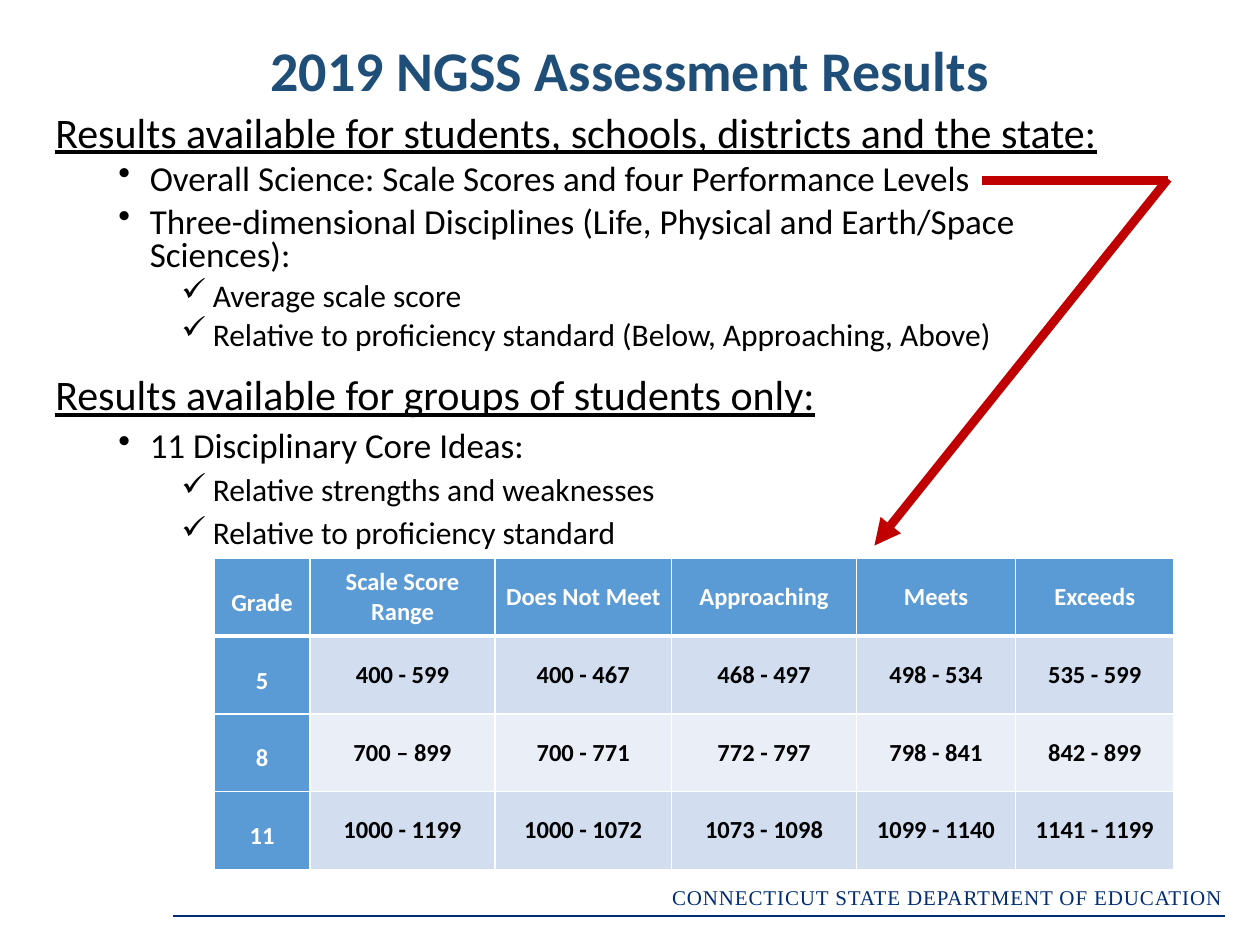
from pptx import Presentation
from pptx.dml.color import RGBColor
from pptx.enum.shapes import MSO_CONNECTOR
from pptx.enum.text import MSO_ANCHOR, PP_ALIGN
from pptx.oxml.ns import qn
from pptx.util import Pt
from lxml import etree

STRAIGHT = MSO_CONNECTOR.STRAIGHT
TOP, MIDDLE = MSO_ANCHOR.TOP, MSO_ANCHOR.MIDDLE
CENTER, RIGHT = PP_ALIGN.CENTER, PP_ALIGN.RIGHT

WHITE = RGBColor(0xFF, 0xFF, 0xFF)
BLACK = RGBColor(0x00, 0x00, 0x00)
NAVY = RGBColor(0x00, 0x2D, 0x73)
TITLE_BLUE = RGBColor(0x1F, 0x4E, 0x79)
HEADER_BLUE = RGBColor(0x5B, 0x9B, 0xD5)
BAND_DARK = RGBColor(0xD2, 0xDE, 0xEF)
BAND_LIGHT = RGBColor(0xEA, 0xEF, 0xF7)
RED = RGBColor(0xC0, 0x00, 0x00)


def set_font(para, size, color, name="Calibri", bold=False):
    para.font.name = name
    para.font.size = Pt(size)
    para.font.bold = bold
    para.font.color.rgb = color


def add_line(start, end, color, width):
    line = page.shapes.add_connector(STRAIGHT, *map(Pt, start + end))
    line.line.color.rgb = color
    line.line.width = Pt(width)
    etree.SubElement(line._element.spPr, qn("a:effectLst"))
    return line


deck = Presentation()
deck.slide_width, deck.slide_height = Pt(720), Pt(540)
page = deck.slides.add_slide(deck.slide_layouts[6])

# Footer
add_line((98.64, 523.44), (699.84, 523.44), NAVY, 0.75)
footer = page.shapes.add_textbox(Pt(372.96), Pt(501.84), Pt(332.64), Pt(21.6))
footer.text_frame.word_wrap = True
para = footer.text_frame.paragraphs[0]
span = para.add_run()
span.text = "CONNECTICUT STATE DEPARTMENT OF EDUCATION"
span._r.get_or_add_rPr().set("spc", "50")
para.alignment = RIGHT
set_font(para, 12, NAVY, "Times New Roman")

# Title
title = page.shapes.add_textbox(Pt(49.68), Pt(18), Pt(620.64), Pt(48.24))
title.text_frame.word_wrap = True
title.text_frame.vertical_anchor = MIDDLE
para = title.text_frame.paragraphs[0]
para.text = "2019 NGSS Assessment Results"
para.alignment = CENTER
para.line_spacing = 0.9
set_font(para, 32, TITLE_BLUE, bold=True)

# Outlines: top, line spacing, (level, text)
OUTLINES = [
    (62.64, 0.8, [
        (0, "Results available for students, schools, districts and the state:"),
        (1, "Overall Science: Scale Scores and four Performance Levels"),
        (1, "Three-dimensional Disciplines (Life, Physical and Earth/Space Sciences):"),
        (2, "Average scale score"),
        (2, "Relative to proficiency standard (Below, Approaching, Above)"),
    ]),
    (210.24, 0.9, [
        (0, "Results available for groups of students only:"),
        (1, "11 Disciplinary Core Ideas:"),
        (2, "Relative strengths and weaknesses"),
        (2, "Relative to proficiency standard"),
    ]),
]
SIZES = [24, 20, 18]
BULLETS = ["", "•", "✓"]
for top, spacing, items in OUTLINES:
    box = page.shapes.add_textbox(Pt(24.48), Pt(top), Pt(620.64), Pt(146.88))
    frame = box.text_frame
    frame.word_wrap = True
    for index, (level, text) in enumerate(items):
        para = frame.add_paragraph() if index else frame.paragraphs[0]
        para.text = text
        para.level = level
        para.line_spacing = spacing
        para.space_before = Pt(5 if index else 0)
        if level:
            props = para._p.get_or_add_pPr()
            props.set("marL", str(Pt(18 + 36 * level)))
            props.set("indent", str(Pt(-18)))
            etree.SubElement(props, qn("a:buChar"), char=BULLETS[level])
        set_font(para, SIZES[level], BLACK)
        para.font.underline = level == 0

# Score table
ROWS = [
    ["Grade", "Scale Score Range", "Does Not Meet", "Approaching", "Meets", "Exceeds"],
    ["5", "400 - 599", "400 - 467", "468 - 497", "498 - 534", "535 - 599"],
    ["8", "700 – 899", "700 - 771", "772 - 797", "798 - 841", "842 - 899"],
    ["11", "1000 - 1199", "1000 - 1072", "1073 - 1098", "1099 - 1140", "1141 - 1199"],
]
WIDTHS = [54.72, 105.84, 100.8, 105.84, 90.72, 90.72]
ROW_HEIGHT = 44.5
table = page.shapes.add_table(len(ROWS), len(WIDTHS), Pt(122.4), Pt(318.96),
                              Pt(sum(WIDTHS)), Pt(ROW_HEIGHT * len(ROWS))).table
for column, width in zip(table.columns, WIDTHS):
    column.width = Pt(width)
for r, texts in enumerate(ROWS):
    table.rows[r].height = Pt(ROW_HEIGHT)
    for c, text in enumerate(texts):
        cell = table.cell(r, c)
        heading = r == 0 or c == 0
        cell.margin_left = cell.margin_right = Pt(5)
        cell.margin_bottom = 0
        # The grade column sits one text line below the top
        cell.margin_top = Pt(0 if c else 17)
        cell.vertical_anchor = MIDDLE if c else TOP
        para = cell.text_frame.paragraphs[0]
        para.text = text
        para.alignment = CENTER
        set_font(para, 14, WHITE if heading else BLACK, bold=True)
        # White borders, thicker under the header row
        props = cell._tc.get_or_add_tcPr()
        for side in "LRTB":
            thick = (r, side) in ((0, "B"), (1, "T"))
            border = etree.SubElement(props, qn(f"a:ln{side}"), w=str(Pt(3 if thick else 1)))
            fill = etree.SubElement(border, qn("a:solidFill"))
            etree.SubElement(fill, qn("a:srgbClr"), val=str(WHITE))
        cell.fill.solid()
        cell.fill.fore_color.rgb = HEADER_BLUE if heading else BAND_DARK if r % 2 else BAND_LIGHT

# Arrow from the performance levels to the table
add_line((560.88, 102.96), (667.44, 102.96), RED, 5)
arrow = add_line((667.44, 102.24), (499.68, 311.76), RED, 5)
etree.SubElement(arrow.line._get_or_add_ln(), qn("a:tailEnd"), type="triangle")

deck.save("out.pptx")
